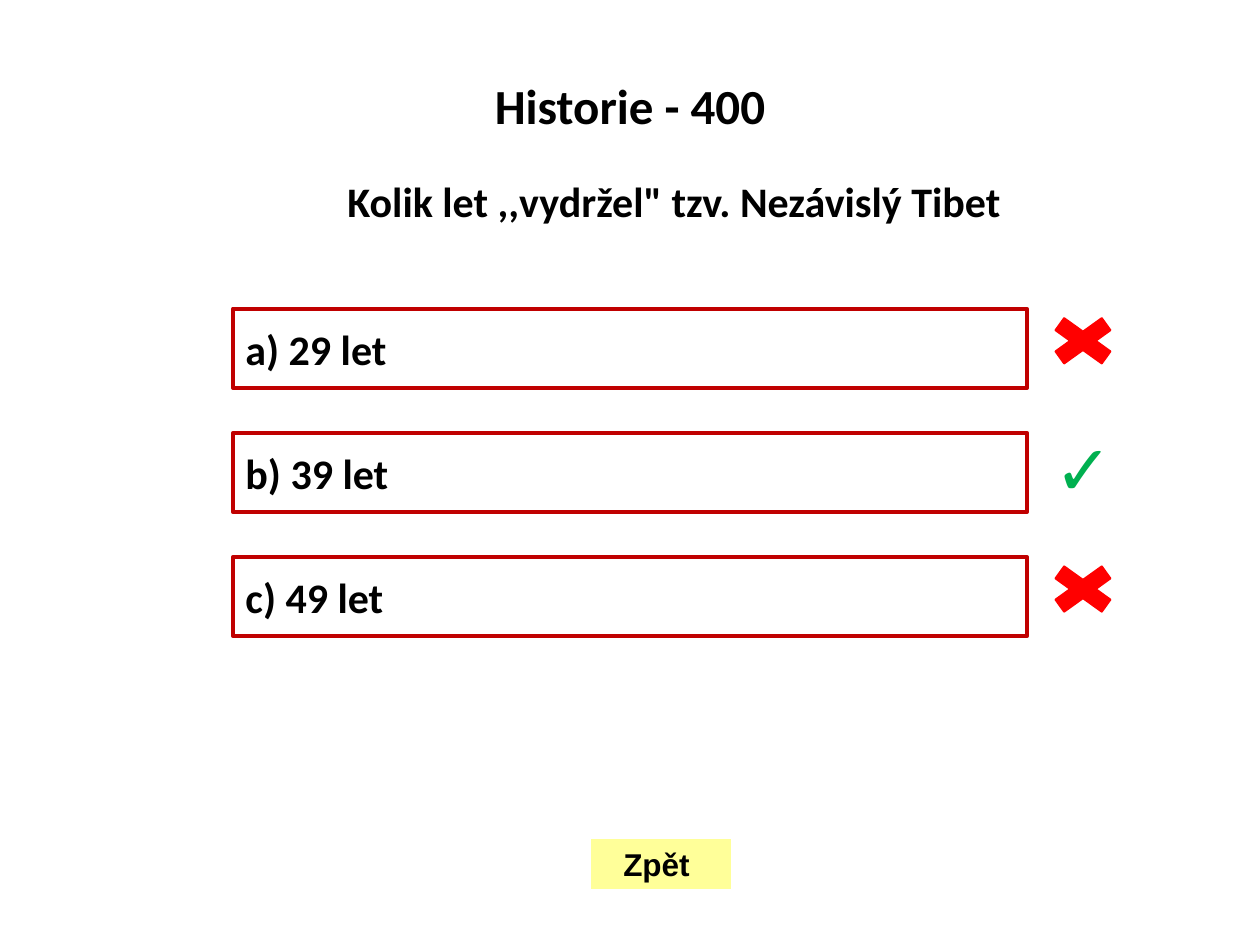
from pptx import Presentation
from pptx.dml.color import RGBColor
from pptx.enum.shapes import MSO_SHAPE
from pptx.enum.text import MSO_ANCHOR, PP_ALIGN
from pptx.util import Inches, Pt

BLACK = RGBColor(0x00, 0x00, 0x00)
DARK_RED = RGBColor(0xC0, 0x00, 0x00)
RED = RGBColor(0xFF, 0x00, 0x00)
GREEN = RGBColor(0x00, 0xB0, 0x50)
YELLOW = RGBColor(0xFF, 0xFF, 0x99)

ANSWERS = [("a) 29 let", False), ("b) 39 let", True), ("c) 49 let", False)]


def write(sp, text, size, font="Calibri", color=BLACK, wrap=True,
          anchor=MSO_ANCHOR.TOP, **para):
    """Put one bold paragraph into a shape."""
    tf = sp.text_frame
    tf.word_wrap, tf.vertical_anchor = wrap, anchor
    p = tf.paragraphs[0]
    for key, value in para.items():
        setattr(p, key, value)
    r = p.add_run()
    r.text = text
    for key, value in {"name": font, "size": Pt(size), "bold": True}.items():
        setattr(r.font, key, value)
    r.font.color.rgb = color


def add_text(s, box, text, size, **fmt):
    """Add a text box in the given box."""
    write(s.shapes.add_textbox(*map(Inches, box)), text, size, **fmt)


def add_box(s, kind, box, fill=None, line=None, width=1):
    """Add a flat preset shape in the given box."""
    sp = s.shapes.add_shape(kind, *map(Inches, box))
    sp.shadow.inherit = False
    for part, color in ((sp.fill, fill), (sp.line.fill, line)):
        if color is None:
            part.background()
        else:
            part.solid()
            part.fore_color.rgb = color
    if line is not None:
        sp.line.width = Pt(width)
    return sp


def add_button(s, box, text, size, align=PP_ALIGN.LEFT, font="Calibri", **look):
    """Add a blank action button with a label."""
    sp = add_box(s, MSO_SHAPE.ACTION_BUTTON_CUSTOM, box, **look)
    write(sp, text, size, font, wrap=False, anchor=MSO_ANCHOR.MIDDLE,
          alignment=align)


def add_heading(s, x, y, w):
    """Add the category title and the question below it."""
    add_text(s, (x, y, w, 0.79), "\N{NO-BREAK SPACE}Historie - 400\N{NO-BREAK SPACE}", 28,
             alignment=PP_ALIGN.CENTER, line_spacing=0.9, space_before=Pt(10))
    add_text(s, (x + 1.61, y + 0.74, 7.48, 0.5),
             'Kolik let ,,vydržel" tzv. Nezávislý Tibet', 24,
             alignment=PP_ALIGN.CENTER)


def add_answers(s, x, y, w, h, pitch):
    """Add a column of answers, each with its mark on the right."""
    for i, (text, correct) in enumerate(ANSWERS):
        top = y + i * pitch
        add_button(s, (x, top, w, h), text, 24, line=DARK_RED, width=2.25)
        if correct:
            add_text(s, (x + w + 0.12, top - 0.11, 0.63, 0.77), "✓", 40,
                     font="Arial", color=GREEN)
        else:
            add_box(s, MSO_SHAPE.MATH_MULTIPLY,
                    (x + w + 0.09, top, 0.71, 0.51), fill=RED, line=RED)


def main():
    """Build the quiz slide."""
    prs = Presentation()
    prs.slide_width, prs.slide_height = Inches(10), Inches(7.5)
    s = prs.slides.add_slide(prs.slide_layouts[6])
    add_heading(s, 0, 0.6, 10)
    add_answers(s, 1.85, 2.45, 6.3, 0.63, 0.985)
    add_button(s, (4.69, 6.66, 1.11, 0.4), "Zpět ", 18, PP_ALIGN.CENTER,
               "Arial", fill=YELLOW)
    prs.save("out.pptx")


if __name__ == "__main__":
    main()
